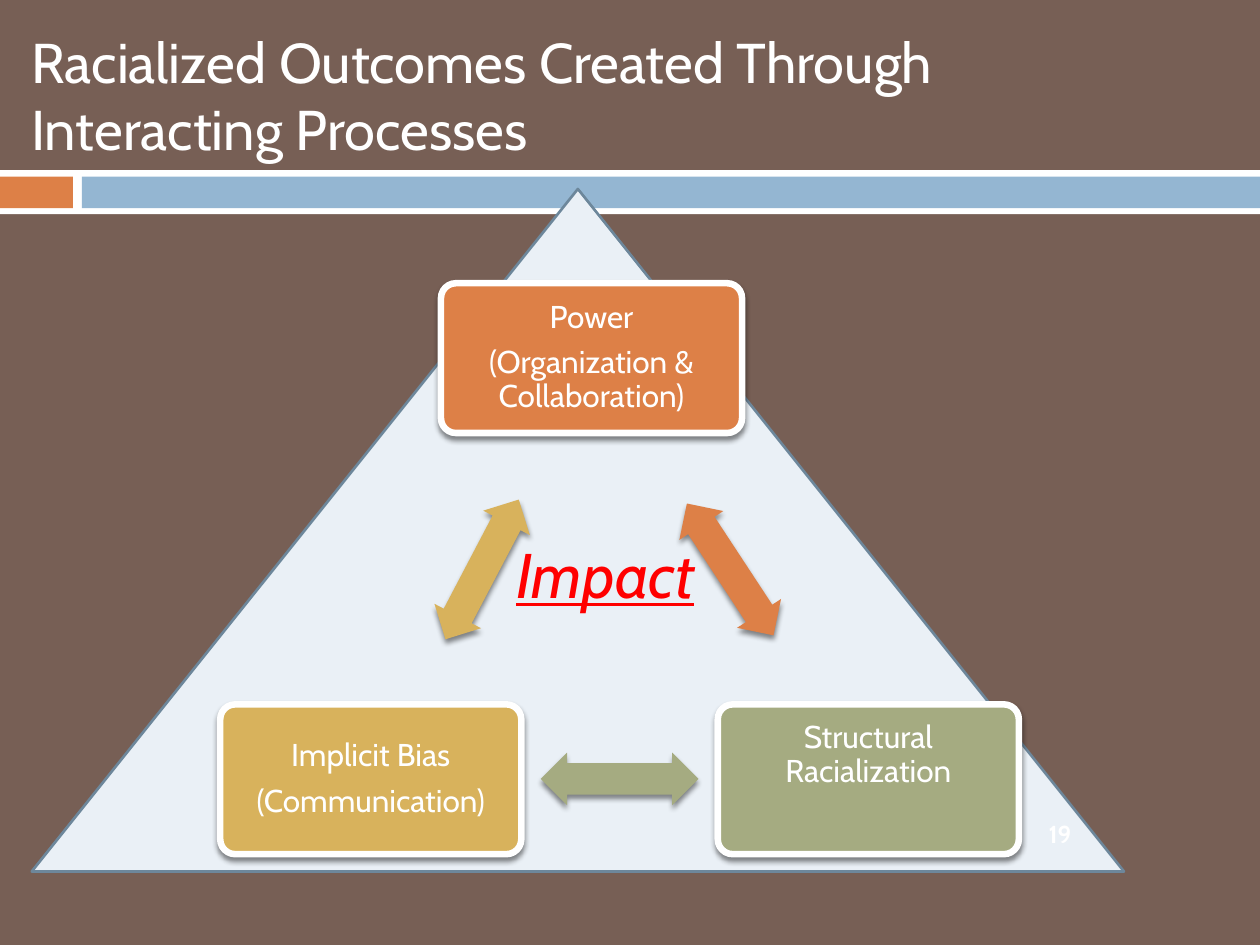
"""Build the slide on racialized outcomes created through interacting processes."""
from lxml import etree
from pptx import Presentation
from pptx.dml.color import RGBColor
from pptx.enum import shapes, text
from pptx.oxml import ns
from pptx.util import Cm, Pt

COLORS = {
    "brown": "775F55", "white": "FFFFFF", "orange": "DD8047", "blue": "94B6D2",
    "pale": "EAF0F6", "slate": "6D879B", "green": "A5AB81", "gold": "D8B25C",
    "red": "FF0000", "black": "000000",
}
FONT = "Cabin"
KINDS = shapes.MSO_SHAPE

TITLE = "Racialized Outcomes Created Through Interacting Processes"
BANDS = [
    ("white", 0, 3.43, 25.4, 0.89),
    ("orange", 0, 3.56, 1.47, 0.64),
    ("blue", 1.65, 3.56, 23.75, 0.64),
]
CARD_SIZE = (6.07, 3.02)
CARDS = [
    ("orange", 8.89, 5.71, 0.18, ["Power", "(Organization & Collaboration)"]),
    ("green", 14.47, 14.2, 1.15, ["Structural Racialization"]),
    ("gold", 4.44, 14.2, 0.18, ["Implicit Bias", "(Communication)"]),
]
ARROW_SIZE = (3.18, 1.06)
ARROWS = [
    ("orange", 13.13, 10.95, 56.7),
    ("green", 10.9, 15.17, 180),
    ("gold", 8.13, 10.95, 297.7),
]


def color(name):
    return RGBColor.from_string(COLORS[name])


def add_figure(page, kind, fill, left, top, width, height, line=None, weight=0):
    figure = page.shapes.add_shape(kind, Cm(left), Cm(top), Cm(width), Cm(height))
    figure.shadow.inherit = False
    figure.fill.solid()
    figure.fill.fore_color.rgb = color(fill)
    if line:
        figure.line.color.rgb = color(line)
        figure.line.width = Pt(weight)
    else:
        figure.line.fill.background()
    return figure


def add_shadow(figure):
    effects = figure.element.spPr.find(ns.qn("a:effectLst"))
    shadow = etree.SubElement(
        effects, ns.qn("a:outerShdw"), blurRad=str(Pt(3)), dist=str(Pt(2.4)),
        dir="5400000", algn="ctr", rotWithShape="0")
    tint = etree.SubElement(shadow, ns.qn("a:srgbClr"), val=COLORS["black"])
    etree.SubElement(tint, ns.qn("a:alpha"), val="45000")


def style(para, size, name="white"):
    para.font.name = FONT
    para.font.size = Pt(size)
    para.font.color.rgb = color(name)


def add_label(page, words, left, top, width, height, size, name="white"):
    box = page.shapes.add_textbox(Cm(left), Cm(top), Cm(width), Cm(height))
    box.text_frame.word_wrap = True
    para = box.text_frame.paragraphs[0]
    para.text = words
    style(para, size, name)
    return box.text_frame, para


def add_card(page, fill, left, top, bottom_inset, lines):
    card = add_figure(page, KINDS.ROUNDED_RECTANGLE, fill, left, top, *CARD_SIZE,
                      line="white", weight=3.75)
    card.adjustments[0] = 0.1
    add_shadow(card)
    frame = card.text_frame
    frame.word_wrap = True
    frame.vertical_anchor = text.MSO_ANCHOR.MIDDLE
    frame.margin_left = frame.margin_right = frame.margin_top = Cm(0.18)
    frame.margin_bottom = Cm(bottom_inset)
    frame.text = "\n".join(lines)
    for para in frame.paragraphs:
        style(para, 18)
        para.alignment = text.PP_ALIGN.CENTER
        para.line_spacing = 0.9
        para.space_after = Pt(6.3)


def add_arrow(page, fill, left, top, angle):
    arrow = add_figure(page, KINDS.LEFT_RIGHT_ARROW, fill, left, top, *ARROW_SIZE)
    arrow.adjustments[0] = 0.6
    arrow.adjustments[1] = 0.5
    arrow.rotation = angle
    add_shadow(arrow)


def main():
    deck = Presentation()
    deck.slide_width, deck.slide_height = Cm(25.4), Cm(19.05)
    page = deck.slides.add_slide(deck.slide_layouts[6])
    page.background.fill.solid()
    page.background.fill.fore_color.rgb = color("brown")

    for band in BANDS:
        add_figure(page, KINDS.RECTANGLE, *band)
    add_figure(page, KINDS.ISOSCELES_TRIANGLE, "pale", 0.64, 3.81, 22.02, 13.76,
               line="slate", weight=1.5)
    for card in CARDS:
        add_card(page, *card)
    for arrow in ARROWS:
        add_arrow(page, *arrow)

    frame, impact = add_label(page, "Impact", 10.16, 9.96, 12.9, 3.18, 36, "red")
    frame.vertical_anchor = text.MSO_ANCHOR.MIDDLE
    impact.font.italic = impact.font.underline = True

    add_label(page, TITLE, 0.38, 0.43, 21.39, 3, 32)

    frame, number = add_label(page, "19", 20.57, 16.31, 1.6, 1, 14)
    frame.vertical_anchor = text.MSO_ANCHOR.MIDDLE
    number.alignment = text.PP_ALIGN.CENTER
    number.font.bold = True

    deck.save("out.pptx")


if __name__ == "__main__":
    main()
